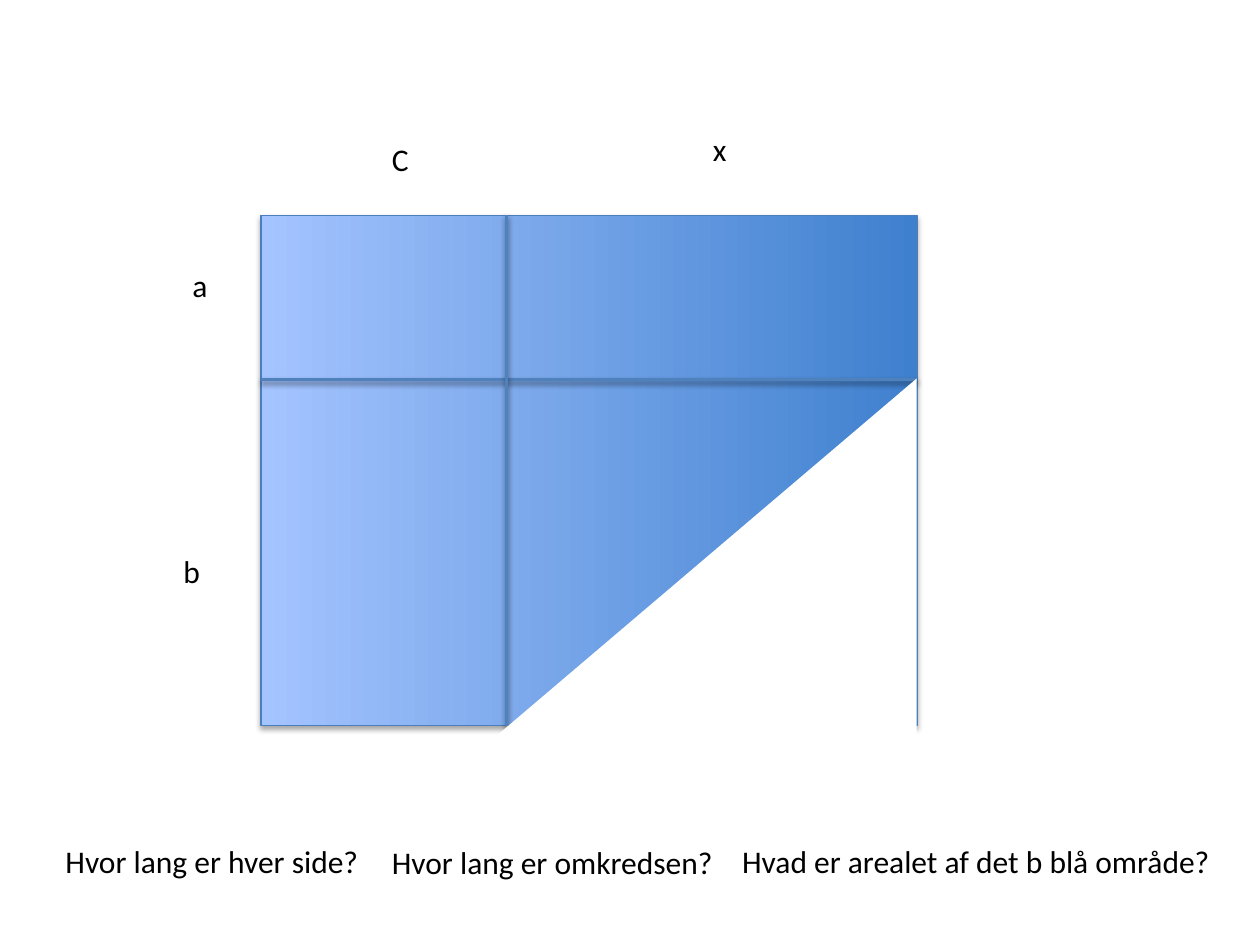
"""Build a slide about the sides, perimeter and area of a cut rectangle."""
from dataclasses import dataclass

from lxml import etree
from pptx import Presentation
from pptx.dml.color import RGBColor
from pptx.enum import shapes, text
from pptx.oxml import ns
from pptx.util import Cm, Pt


@dataclass(frozen=True)
class Box:
    left: float
    top: float
    width: float
    height: float

    @property
    def right(self) -> float:
        return self.left + self.width

    @property
    def bottom(self) -> float:
        return self.top + self.height


@dataclass(frozen=True)
class Label:
    words: str
    left: float
    top: float
    width: float
    height: float = 1.02


FIELD = Box(5.26, 4.34, 13.23, 10.29)
CUT = Box(9.46, 7.63, 9.02, 7.67)
SPLIT_X, SPLIT_Y = 10.21, 7.65
LABELS = [
    Label("C", 7.65, 2.69, 0.86, 1.8),
    Label("a", 3.63, 5.23, 0.81),
    Label("b", 3.45, 11, 0.84),
    Label("x", 14.12, 2.49, 0.79),
    Label("Hvor lang er hver side?", 1.07, 16.84, 6.5),
    Label("Hvor lang er omkredsen?", 7.65, 16.87, 7.06),
    Label("Hvad er arealet af det b blå område?", 14.71, 16.84, 10.08, 1.8),
]


def paint(color, value: str) -> None:
    color.rgb = RGBColor.from_string(value)


def add_shadow(sp, opacity: int, distance: float) -> None:
    effects = etree.SubElement(sp._element.spPr, ns.qn("a:effectLst"))
    shadow = etree.SubElement(
        effects, ns.qn("a:outerShdw"), blurRad=str(Pt(3.1)),
        dist=str(Pt(distance)), dir="5400000", rotWithShape="0")
    black = etree.SubElement(shadow, ns.qn("a:srgbClr"), val="000000")
    etree.SubElement(black, ns.qn("a:alpha"), val=str(opacity * 1000))


def add_turned(s, kind, box: Box):
    """Add a shape turned a quarter left so that it fills the given box."""
    shift = (box.width - box.height) / 2
    sp = s.shapes.add_shape(kind, Cm(box.left + shift), Cm(box.top - shift),
                            Cm(box.height), Cm(box.width))
    sp.rotation = 270
    return sp


def add_field(s, box: Box) -> None:
    sp = add_turned(s, shapes.MSO_SHAPE.RECTANGLE, box)
    sp.fill.gradient()
    sp.fill.gradient_angle = 90
    for stop, value in zip(sp.fill.gradient_stops, ("3F80CE", "A4C4FF")):
        paint(stop.color, value)
    paint(sp.line.color, "4B7EBC")
    sp.line.width = Pt(0.75)
    add_shadow(sp, 35, 1.8)


def add_cut(s, box: Box) -> None:
    sp = add_turned(s, shapes.MSO_SHAPE.RIGHT_TRIANGLE, box)
    sp.shadow.inherit = False
    sp.fill.solid()
    paint(sp.fill.fore_color, "FFFFFF")
    sp.line.fill.background()


def add_divider(s, x1: float, y1: float, x2: float, y2: float) -> None:
    sp = s.shapes.add_connector(shapes.MSO_CONNECTOR.STRAIGHT,
                                Cm(x1), Cm(y1), Cm(x2), Cm(y2))
    paint(sp.line.color, "4F81BD")
    sp.line.width = Pt(2)
    add_shadow(sp, 38, 1.6)


def add_label(s, label: Label) -> None:
    sp = s.shapes.add_textbox(Cm(label.left), Cm(label.top),
                              Cm(label.width), Cm(label.height))
    tf = sp.text_frame
    tf.word_wrap = False
    tf.auto_size = text.MSO_AUTO_SIZE.SHAPE_TO_FIT_TEXT
    tf.text = label.words
    r = tf.paragraphs[0].runs[0]
    r.font.name = "Calibri"
    r.font.size = Pt(18)
    paint(r.font.color, "000000")


def main() -> None:
    prs = Presentation()
    prs.slide_width, prs.slide_height = Cm(25.4), Cm(19.05)
    s = prs.slides.add_slide(prs.slide_layouts[6])
    add_field(s, FIELD)
    add_divider(s, FIELD.left, SPLIT_Y, FIELD.right, SPLIT_Y)
    add_divider(s, SPLIT_X, FIELD.bottom, SPLIT_X, FIELD.top)
    for label in LABELS:
        add_label(s, label)
    add_cut(s, CUT)
    prs.save("out.pptx")


if __name__ == "__main__":
    main()
